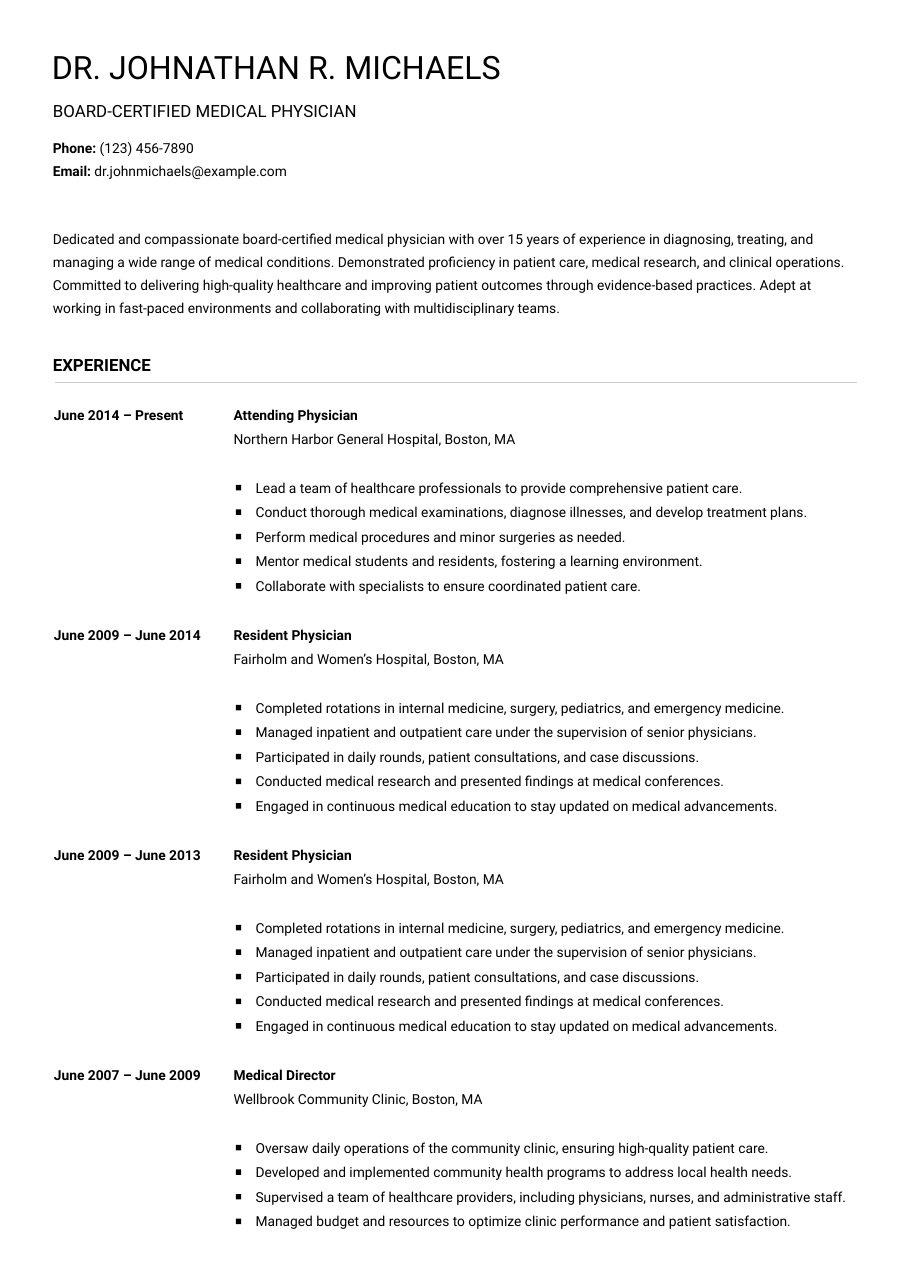
from lxml import etree
from pptx import Presentation
from pptx import util as u
from pptx.dml.color import RGBColor
from pptx.enum import shapes, text
from pptx.oxml import ns

theme = {
    "font": "Roboto",
    "ink": RGBColor(0, 0, 0),
    "rule": RGBColor(0xCE, 0xCD, 0xCD),
    "name": u.Pt(21),
    "head": u.Pt(11),
    "body": u.Pt(9),
}

cell = u.Inches(0.01)
left, date, job, dot, item = 48, 49, 212, 214, 232
right = 777
row, gap = 22.3, 199.7
line = 15

deck = Presentation()
deck.slide_width = 827 * cell
deck.slide_height = 1169 * cell
page = deck.slides.add_slide(deck.slide_layouts[5])


def place(box, x, y, wide, high):
    box.left, box.top = int(x * cell), int(y * cell)
    box.width, box.height = int(wide * cell), int(high * cell)


def write(x, y, wide, high, parts, size="body", box=None):
    box = box or page.shapes.add_textbox(0, 0, 0, 0)
    place(box, x, y, wide, high)
    frame = box.text_frame
    frame.word_wrap = True
    frame.auto_size = text.MSO_AUTO_SIZE.SHAPE_TO_FIT_TEXT
    frame.vertical_anchor = text.MSO_ANCHOR.TOP
    frame.margin_left = frame.margin_right = 0
    frame.margin_top = frame.margin_bottom = 0
    para = frame.paragraphs[0]
    para.alignment = text.PP_ALIGN.LEFT
    for words, bold in parts:
        run = para.add_run()
        run.text = words
        run.font.name = theme["font"]
        run.font.size = theme[size]
        run.font.bold = bold
        run.font.color.rgb = theme["ink"]
    return para


write(47, 43, 568, 35, [("DR. JOHNATHAN R. MICHAELS", False)], "name", page.shapes.title)
write(left, 91, 568, 19, [("BOARD-CERTIFIED MEDICAL PHYSICIAN", False)], "head")

contacts = [("Phone:", " (123) 456-7890"), ("Email:", " dr.johnmichaels@example.com")]
for n, (label, value) in enumerate(contacts):
    write(left, 127 + 21 * n, 287, line, [(label, True), (value, False)])

about = (
    "Dedicated and compassionate board-certified medical physician with over 15 years "
    "of experience in diagnosing, treating, and managing a wide range of medical "
    "conditions. Demonstrated proficiency in patient care, medical research, and "
    "clinical operations. Committed to delivering high-quality healthcare and improving "
    "patient outcomes through evidence-based practices. Adept at working in fast-paced "
    "environments and collaborating with multidisciplinary teams."
)
write(left, 203, right - left, 79, [(about, False)]).line_spacing = 1.4

write(left, 322, 287, 19, [("EXPERIENCE", True)], "head")
rule = page.shapes.add_connector(
    shapes.MSO_CONNECTOR.STRAIGHT, 50 * cell, 347 * cell, 778 * cell, 347 * cell
)
rule.line.color.rgb = theme["rule"]
rule.line.width = u.Pt(0.75)
etree.SubElement(rule._element.spPr, ns.qn("a:effectLst"))

rounds = [
    "Completed rotations in internal medicine, surgery, pediatrics, and emergency medicine.",
    "Managed inpatient and outpatient care under the supervision of senior physicians.",
    "Participated in daily rounds, patient consultations, and case discussions.",
    "Conducted medical research and presented findings at medical conferences.",
    "Engaged in continuous medical education to stay updated on medical advancements.",
]
posts = [
    ("June 2014 – Present", "Attending Physician", "Northern Harbor General Hospital, Boston, MA", [
        "Lead a team of healthcare professionals to provide comprehensive patient care.",
        "Conduct thorough medical examinations, diagnose illnesses, and develop treatment plans.",
        "Perform medical procedures and minor surgeries as needed.",
        "Mentor medical students and residents, fostering a learning environment.",
        "Collaborate with specialists to ensure coordinated patient care.",
    ]),
    ("June 2009 – June 2014", "Resident Physician", "Fairholm and Women’s Hospital, Boston, MA", rounds),
    ("June 2009 – June 2013", "Resident Physician", "Fairholm and Women’s Hospital, Boston, MA", rounds),
    ("June 2007 – June 2009", "Medical Director", "Wellbrook Community Clinic, Boston, MA", [
        "Oversaw daily operations of the community clinic, ensuring high-quality patient care.",
        "Developed and implemented community health programs to address local health needs.",
        "Supervised a team of healthcare providers, including physicians, nurses, and administrative staff.",
        "Managed budget and resources to optimize clinic performance and patient satisfaction.",
    ]),
]

for n, (dates, role, place_name, duties) in enumerate(posts):
    top = 369 + gap * n
    write(date, top, 144, line, [(dates, True)])
    write(job, top, 195, line, [(role, True)])
    write(job, top + 22, 351, line, [(place_name, False)])
    for k, duty in enumerate(duties):
        y = top + 66 + row * k
        write(item, y, right - item, line, [(duty, False)])
        mark = page.shapes.add_shape(shapes.MSO_SHAPE.RECTANGLE, 0, 0, 0, 0)
        place(mark, dot, y + 5, 5, 5)
        mark.shadow.inherit = False
        mark.fill.solid()
        mark.fill.fore_color.rgb = theme["ink"]
        mark.line.fill.background()

deck.save("out.pptx")
